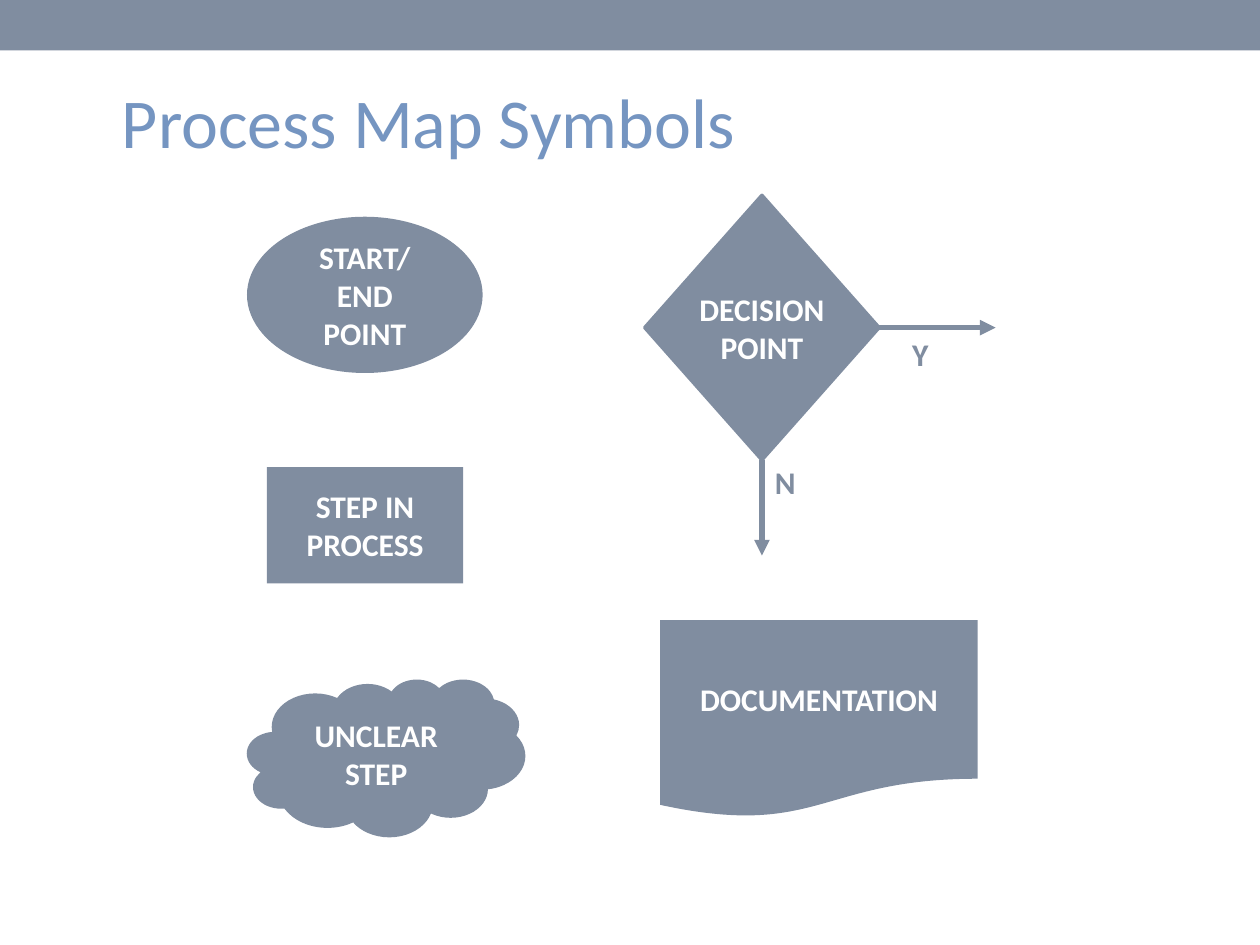
from dataclasses import dataclass

from lxml import etree
from pptx import Presentation
from pptx.dml.color import RGBColor
from pptx.enum.shapes import MSO_CONNECTOR, MSO_SHAPE as Shape
from pptx.enum.text import MSO_ANCHOR as Anchor, PP_ALIGN as Align
from pptx.oxml.ns import qn
from pptx.util import Cm, Pt


@dataclass(frozen=True)
class Theme:
    slate: RGBColor = RGBColor(0x80, 0x8D, 0xA0)
    blue: RGBColor = RGBColor(0x75, 0x95, 0xC1)
    white: RGBColor = RGBColor(0xFF, 0xFF, 0xFF)
    font: str = "Calibri"
    title: Pt = Pt(40)
    label: Pt = Pt(18)


theme = Theme()


def add_symbol(kind, box):
    sp = s.shapes.add_shape(kind, *map(Cm, box))
    sp.shadow.inherit = False
    sp.fill.solid()
    sp.fill.fore_color.rgb = theme.slate
    sp.line.fill.background()
    return sp


def write(sp, text, size, color, align=Align.LEFT, anchor=Anchor.TOP, bold=True):
    tf = sp.text_frame
    tf.word_wrap = True
    tf.vertical_anchor = anchor
    p = tf.paragraphs[0]
    p.alignment = align
    r = p.add_run()
    r.text = text
    r.font.name = theme.font
    r.font.size = size
    r.font.bold = bold
    r.font.color.rgb = color


prs = Presentation()
prs.slide_width, prs.slide_height = Cm(25.4), Cm(19.05)
s = prs.slides.add_slide(prs.slide_layouts[6])

# Top band and title
add_symbol(Shape.RECTANGLE, (0, 0, 25.4, 1.02))
title = s.shapes.add_textbox(Cm(2.21), Cm(1.45), Cm(21.23), Cm(1.96))
write(title, "Process Map Symbols", theme.title, theme.blue, bold=False)

# Labelled symbols
symbols = [
    (Shape.RECTANGLE, (5.38, 9.42, 3.96, 2.34), "STEP IN PROCESS"),
    (Shape.OVAL, (4.98, 4.37, 4.75, 3.15), "START/ END POINT"),
    (Shape.CLOUD, (4.98, 13.69, 5.61, 3.18), "UNCLEAR STEP"),
    (Shape.FLOWCHART_DOCUMENT, (13.31, 12.5, 6.4, 3.99), "DOCUMENTATION"),
]
for kind, box, text in symbols:
    sp = add_symbol(kind, box)
    write(sp, text, theme.label, theme.white, Align.CENTER, Anchor.MIDDLE)

# Decision diamond
diamond = add_symbol(Shape.DIAMOND, (13, 3.94, 4.72, 5.33))
diamond.line.color.rgb = theme.slate
diamond.line.width = Pt(2.08)
decision = s.shapes.add_textbox(Cm(13.34), Cm(5.72), Cm(4.04), Cm(1.8))
write(decision, "DECISION POINT", theme.label, theme.white, Align.CENTER)

# Yes and no branches: diamond side, arrow tip, label and its place
mid_x = diamond.left + diamond.width // 2
mid_y = diamond.top + diamond.height // 2
branches = [
    (2, mid_x, Cm(11.2), "N", 15.37, 9.2),
    (3, Cm(20.07), mid_y, "Y", 18.14, 6.63),
]
for side, tip_x, tip_y, text, left, top in branches:
    arrow = s.shapes.add_connector(MSO_CONNECTOR.STRAIGHT, mid_x, mid_y, tip_x, tip_y)
    arrow.begin_connect(diamond, side)
    arrow.line.color.rgb = theme.slate
    arrow.line.width = Pt(3)
    ln = arrow.line._get_or_add_ln()
    etree.SubElement(ln, qn("a:tailEnd"), type="triangle")
    etree.SubElement(arrow._element.spPr, qn("a:effectLst"))
    label = s.shapes.add_textbox(Cm(left), Cm(top), Cm(2.03), Cm(1.02))
    write(label, text, theme.label, theme.slate)

prs.save("out.pptx")
